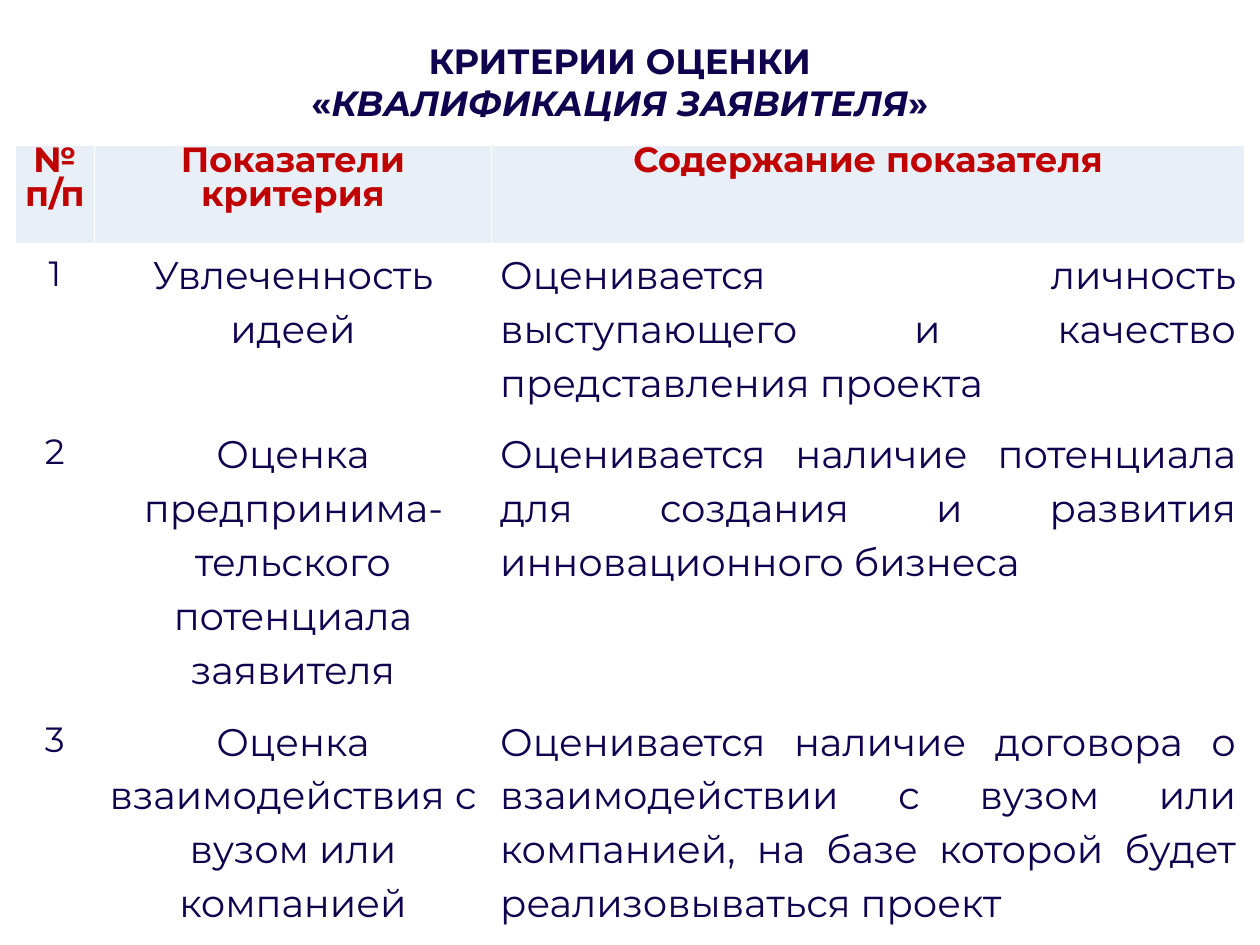
from dataclasses import dataclass

from lxml.etree import SubElement
from pptx import Presentation
from pptx.dml.color import RGBColor as RGB
from pptx.enum.text import MSO_ANCHOR as Anchor, PP_ALIGN as Align
from pptx.oxml.ns import qn
from pptx.util import Inches, Pt


@dataclass(frozen=True)
class Theme:
    font: str = "Montserrat"
    ink: str = "10014F"
    accent: str = "C00000"
    band: str = "E9EFF7"
    rule: str = "FFFFFF"
    base: int = 20
    large: int = 22


THEME = Theme()
COLS = (0.63, 3.15, 5.98)
ROWS = (0.8, 1.42, 2.28, 1.71)
HEAD = ("№\nп/п", "Показатели критерия", "Содержание показателя")
BODY = (
    ("1", "Увлеченность идеей",
     "Оценивается личность выступающего и качество представления проекта"),
    ("2", "Оценка предпринима-тельского потенциала заявителя",
     "Оценивается наличие потенциала для создания и развития "
     "инновационного бизнеса"),
    ("3", "Оценка взаимодействия с вузом или компанией",
     "Оценивается наличие договора о взаимодействии с вузом или компанией, "
     "на базе которой будет реализовываться проект"),
)


def style(par, size, color, bold=False, align=Align.CENTER, space=1.0):
    par.alignment = align
    par.line_spacing = space
    for run in par.runs:
        font = run.font
        font.name, font.size, font.bold = THEME.font, Pt(size), bold
        font.color.rgb = RGB.from_string(color)


def add_title(slide):
    title = slide.shapes.title
    title.left, title.top = Inches(0.04), 0
    title.width, title.height = Inches(9.76), Inches(1.12)
    frame = title.text_frame
    frame.word_wrap = True
    frame.vertical_anchor = Anchor.MIDDLE
    frame.margin_top, frame.margin_bottom = Inches(0.2), Inches(0.03)
    par = frame.paragraphs[0]
    par.text = "КРИТЕРИИ ОЦЕНКИ\v«"
    name = par.add_run()
    name.text = "КВАЛИФИКАЦИЯ ЗАЯВИТЕЛЯ"
    name.font.italic = True
    par.add_run().text = "»"
    style(par, THEME.base, THEME.ink, bold=True)


def add_rules(cell, base):
    """Draw the four cell borders; base is the width of the bottom one."""
    props = cell._tc.get_or_add_tcPr()
    for spot, (side, width) in enumerate(zip("LRTB", (1, 1, 1, base))):
        line = SubElement(props, qn(f"a:ln{side}"), w=str(Pt(width)))
        fill = SubElement(line, qn("a:solidFill"))
        SubElement(fill, qn("a:srgbClr"), val=THEME.rule)
        props.insert(spot, line)


def fill_cell(cell, text, row, col):
    head = row == 0
    cell.text_frame.text = text
    cell.margin_left = cell.margin_right = Inches(0.07 if head or col else 0.1)
    cell.margin_top = cell.margin_bottom = Inches(0 if head or col else 0.05)
    if head:
        cell.fill.solid()
        cell.fill.fore_color.rgb = RGB.from_string(THEME.band)
        look = dict(size=THEME.base, color=THEME.accent, bold=True, space=0.8)
    else:
        cell.fill.background()
        look = dict(size=THEME.large if col else THEME.base, color=THEME.ink,
                    space=1.15 if col else 1.0,
                    align=Align.JUSTIFY if col == 2 else Align.CENTER)
    for par in cell.text_frame.paragraphs:
        style(par, **look)
    add_rules(cell, 3 if head else 1)


def add_grid(slide):
    grid = slide.shapes.add_table(
        len(ROWS), len(COLS), Inches(0.12), Inches(1.15),
        Inches(sum(COLS)), Inches(sum(ROWS))).table
    grid.horz_banding = False
    for col, width in zip(grid.columns, COLS):
        col.width = Inches(width)
    for row, height in zip(grid.rows, ROWS):
        row.height = Inches(height)
    for r, texts in enumerate((HEAD, *BODY)):
        for c, text in enumerate(texts):
            fill_cell(grid.cell(r, c), text, r, c)


def main():
    deck = Presentation()
    deck.slide_width, deck.slide_height = Inches(10), Inches(7.5)
    slide = deck.slides.add_slide(deck.slide_layouts[5])
    add_title(slide)
    add_grid(slide)
    deck.save("out.pptx")


if __name__ == "__main__":
    main()
